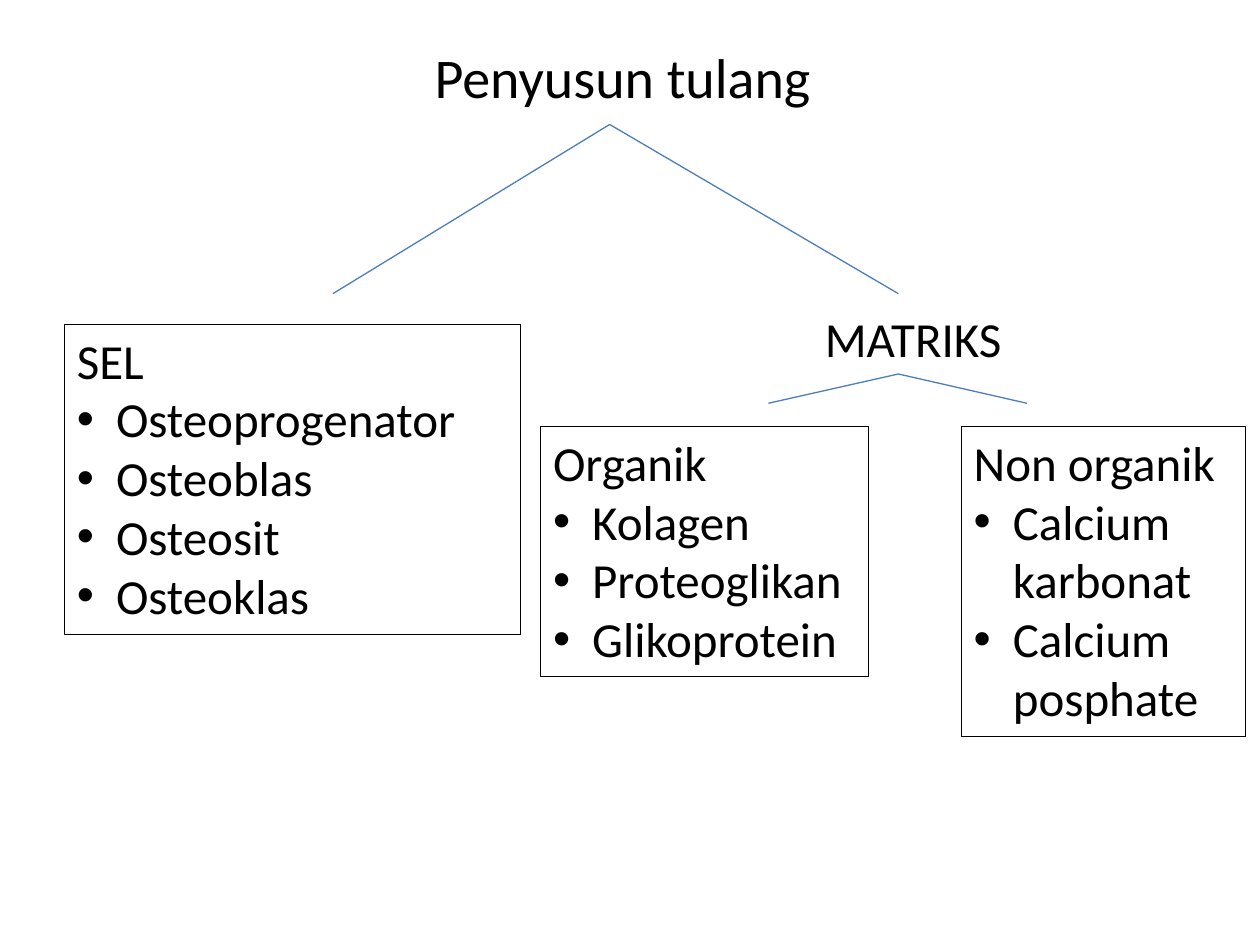
from dataclasses import dataclass

from lxml.etree import SubElement
from pptx import Presentation
from pptx.dml.color import RGBColor
from pptx.enum.shapes import MSO_CONNECTOR as Connector
from pptx.enum.text import MSO_ANCHOR as Anchor, MSO_AUTO_SIZE as AutoSize
from pptx.oxml.ns import qn
from pptx.util import Cm, Pt


@dataclass(frozen=True)
class Theme:
    font: str = "Calibri"
    ink: RGBColor = RGBColor(0, 0, 0)
    branch: RGBColor = RGBColor(0x4B, 0x7E, 0xBC)
    title_size: int = 32
    body_size: int = 28
    branch_width: float = 0.75
    bullet_indent: float = 0.79


THEME = Theme()


def style(paragraph, size):
    paragraph.font.name = THEME.font
    paragraph.font.size = Pt(size)
    paragraph.font.color.rgb = THEME.ink


def set_indent(paragraph, left, first=0.0):
    properties = paragraph._p.get_or_add_pPr()
    properties.set("marL", str(Cm(left)))
    properties.set("indent", str(Cm(first)))
    return properties


def add_bullet(paragraph):
    properties = set_indent(paragraph, THEME.bullet_indent, -THEME.bullet_indent)
    SubElement(properties, qn("a:buFont"), typeface="Arial")
    SubElement(properties, qn("a:buChar"), char="•")


def add_label(slide, box, text, size, indent=0.0):
    """Plain text in a box (left, top, width, height in cm)."""
    label = slide.shapes.add_textbox(*map(Cm, box))
    frame = label.text_frame
    frame.word_wrap = True
    frame.vertical_anchor = Anchor.TOP
    heading = frame.paragraphs[0]
    heading.text = text
    if indent:
        set_indent(heading, indent)
    style(heading, size)
    return label


def add_group(slide, box, heading, members, border):
    """Outlined box with a heading and its bulleted members."""
    group = add_label(slide, box, heading, THEME.body_size)
    group.line.color.rgb = THEME.ink
    group.line.width = Pt(border)
    frame = group.text_frame
    frame.auto_size = AutoSize.SHAPE_TO_FIT_TEXT
    for member in members:
        item = frame.add_paragraph()
        item.text = member
        add_bullet(item)
        style(item, THEME.body_size)


def add_fork(slide, box, apex):
    """Two lines from the apex, at the top edge, to the lower corners."""
    left, top, width, height = box
    for end in (left, left + width):
        branch = slide.shapes.add_connector(
            Connector.STRAIGHT, Cm(left + apex), Cm(top), Cm(end), Cm(top + height))
        branch.line.color.rgb = THEME.branch
        branch.line.width = Pt(THEME.branch_width)
        SubElement(branch._element.spPr, qn("a:effectLst"))


def add_matrix(slide, box):
    """Matrix branch: label, fork and the two kinds of matrix."""
    left, top, width, height = box
    add_label(slide, (left + 5.48, top, 6, 1.45), "MATRIKS", THEME.body_size)
    add_fork(slide, (left + 4.59, top + 1.44, 5.21, 0.59), apex=2.62)
    groups_top = top + 2.49
    add_group(slide, (left, groups_top, 6.6, 5.05), "Organik",
              ["Kolagen", "Proteoglikan", "Glikoprotein"], border=0.5)
    inorganic_width = 5.72
    add_group(slide, (left + width - inorganic_width, groups_top,
                      inorganic_width, height - 2.49), "Non organik",
              ["Calcium karbonat", "Calcium posphate"], border=0.5)


def main():
    deck = Presentation()
    deck.slide_width, deck.slide_height = Cm(25.4), Cm(19.05)
    slide = deck.slides.add_slide(deck.slide_layouts[6])

    # Title and main split
    add_label(slide, (0.89, 0.74, 23.24, 16.28), "Penyusun tulang",
              THEME.title_size, indent=7.62)
    add_fork(slide, (6.71, 2.51, 11.4, 3.41), apex=5.58)

    # Cells on the left, matrix on the right
    add_group(slide, (1.3, 6.53, 9.19, 6.25), "SEL",
              ["Osteoprogenator", "Osteoblas", "Osteosit", "Osteoklas"],
              border=0.25)
    add_matrix(slide, (10.9, 6.1, 14.2, 8.74))

    deck.save("out.pptx")


if __name__ == "__main__":
    main()
